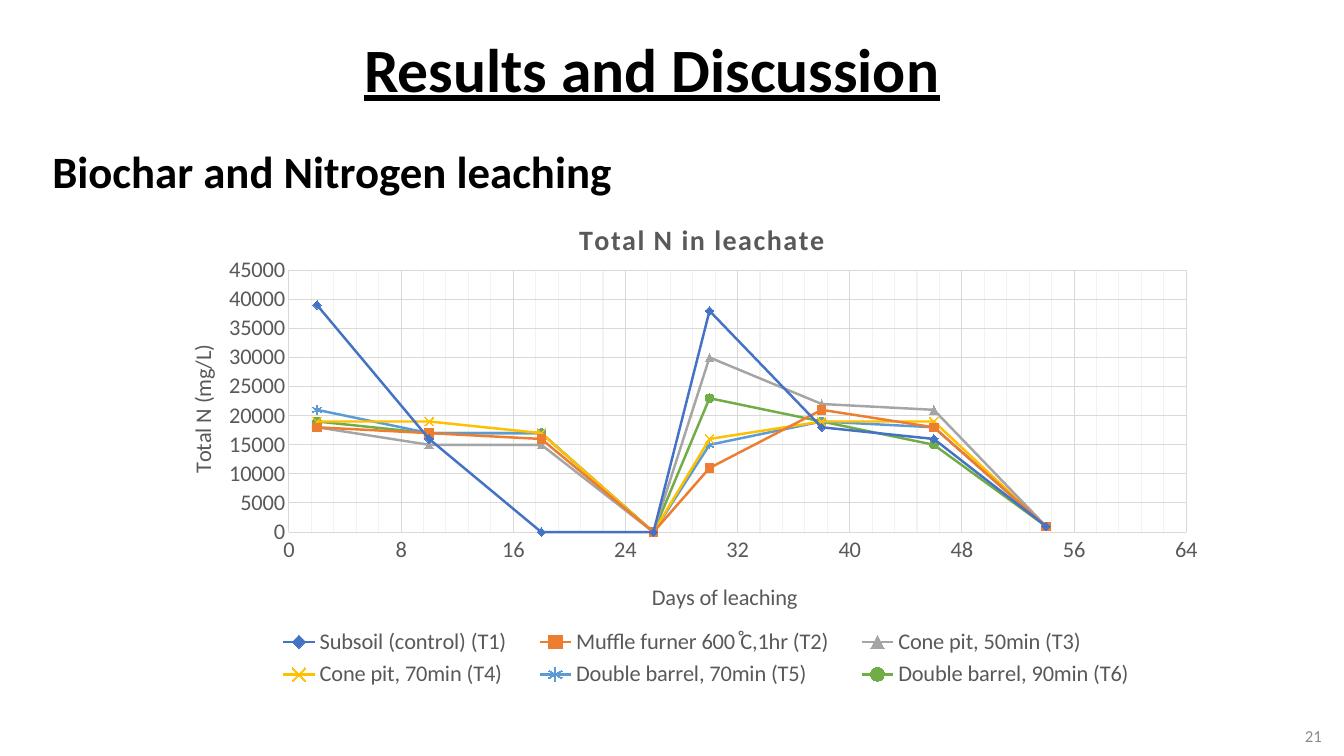
from dataclasses import dataclass

from lxml.etree import SubElement
from pptx import Presentation
from pptx.chart.data import XyChartData
from pptx.dml.color import RGBColor
from pptx.enum.chart import XL_CHART_TYPE as ChartType
from pptx.enum.chart import XL_LEGEND_POSITION as LegendPosition
from pptx.enum.chart import XL_MARKER_STYLE as Marker
from pptx.enum.chart import XL_TICK_MARK as TickMark
from pptx.enum.text import MSO_ANCHOR as Anchor
from pptx.enum.text import PP_ALIGN as Align
from pptx.oxml import parse_xml
from pptx.oxml.ns import nsdecls, qn
from pptx.util import Inches, Pt


@dataclass(frozen=True)
class Theme:
    font: str = "Calibri"
    ink: str = "000000"
    muted: str = "8C8C8C"
    chart_ink: str = "595959"
    grid: str = "D9D9D9"
    minor_grid: str = "F2F2F2"
    title: int = 44
    heading: int = 32
    chart_title: int = 20
    chart_text: int = 16
    page_number: int = 12
    marker: int = 6
    grid_width: float = 0.75
    series_width: float = 1.75


DAYS = (2, 10, 18, 26, 30, 38, 46, 54)
TREATMENTS = [
    ("Subsoil (control) (T1)", "4472C4", Marker.DIAMOND,
     (39000, 16000, 0, 0, 38000, 18000, 16000, 1000)),
    ("Muffle furner 600 ̊C,1hr (T2)", "ED7D31", Marker.SQUARE,
     (18000, 17000, 16000, 0, 11000, 21000, 18000, 1000)),
    ("Cone pit, 50min (T3)", "A5A5A5", Marker.TRIANGLE,
     (18000, 15000, 15000, 0, 30000, 22000, 21000, 1000)),
    ("Cone pit, 70min (T4)", "FFC000", Marker.X,
     (19000, 19000, 17000, 0, 16000, 19000, 19000, 1000)),
    ("Double barrel, 70min (T5)", "5B9BD5", Marker.STAR,
     (21000, 17000, 17000, 0, 15000, 19000, 18000, 1000)),
    ("Double barrel, 90min (T6)", "70AD47", Marker.CIRCLE,
     (19000, 17000, 17000, 0, 23000, 19000, 15000, 1000)),
]
OPEN_MARKERS = (Marker.X, Marker.STAR)


def set_attributes(target, values):
    for name, value in values.items():
        setattr(target, name, value)


def set_layout(element, after, **fractions):
    """Place a chart part by fractions of the chart, behind its child named after."""
    for layout in element.findall(qn("c:layout")):
        element.remove(layout)
    layout = parse_xml(f"<c:layout {nsdecls('c')}/>")
    manual = SubElement(layout, qn("c:manualLayout"))
    if after is None:
        SubElement(manual, qn("c:layoutTarget")).set("val", "inner")
    for name in ("x", "y"):
        SubElement(manual, qn(f"c:{name}Mode")).set("val", "edge")
    for name, value in fractions.items():
        SubElement(manual, qn(f"c:{name}")).set("val", str(value))
    if after is None:
        element.insert(0, layout)
    else:
        element.find(qn(after)).addnext(layout)


class SlideBuilder:
    def __init__(self, slide, theme):
        self.slide = slide
        self.theme = theme

    def style_font(self, font, size, color, **extra):
        values = {"name": self.theme.font, "size": Pt(size), **extra}
        set_attributes(font, values)
        font.color.rgb = RGBColor.from_string(color)

    def style_line(self, line, color, width):
        line.color.rgb = RGBColor.from_string(color)
        line.width = Pt(width)

    def text(self, box, words, size, color, frame=None, paragraph=None, **font):
        shape = self.slide.shapes.add_textbox(*map(Inches, box))
        text_frame = shape.text_frame
        set_attributes(text_frame, {"word_wrap": True, **(frame or {})})
        first = text_frame.paragraphs[0]
        set_attributes(first, paragraph or {})
        run = first.add_run()
        run.text = words
        self.style_font(run.font, size, color, **font)

    def chart_label(self, title, words, size, x, y, spacing=0, bold=False):
        paragraph = title.text_frame.paragraphs[0]
        run = paragraph.add_run()
        run.text = words
        self.style_font(run.font, size, self.theme.chart_ink, bold=bold)
        if spacing:
            run.font._element.set("spc", str(spacing))
        set_layout(title._element, "c:tx", x=x, y=y)

    def minor_gridlines(self, axis):
        axis.has_minor_gridlines = True
        gridlines = axis._element.find(qn("c:minorGridlines"))
        gridlines.append(parse_xml(
            f"<c:spPr {nsdecls('c', 'a')}><a:ln w='{Pt(self.theme.grid_width)}'>"
            f"<a:solidFill><a:srgbClr val='{self.theme.minor_grid}'/></a:solidFill>"
            "</a:ln></c:spPr>"))

    def axis(self, axis, words, place, **scale):
        theme = self.theme
        set_attributes(axis, {
            "minimum_scale": 0,
            "major_tick_mark": TickMark.NONE,
            "minor_tick_mark": TickMark.NONE,
            "has_major_gridlines": True,
            **scale,
        })
        self.style_font(axis.tick_labels.font, theme.chart_text, theme.chart_ink)
        for line in (axis.format.line, axis.major_gridlines.format.line):
            self.style_line(line, theme.grid, theme.grid_width)
        self.chart_label(axis.axis_title, words, theme.chart_text, *place)

    def series(self, series, color, marker):
        theme = self.theme
        self.style_line(series.format.line, color, theme.series_width)
        set_attributes(series.marker, {"style": marker, "size": theme.marker})
        self.style_line(series.marker.format.line, color, theme.grid_width)
        fill = series.marker.format.fill
        if marker in OPEN_MARKERS:
            fill.background()
        else:
            fill.solid()
            fill.fore_color.rgb = RGBColor.from_string(color)

    def leachate_chart(self, box):
        theme = self.theme
        data = XyChartData()
        for name, _, _, amounts in TREATMENTS:
            points = data.add_series(name)
            for day, amount in zip(DAYS, amounts):
                points.add_data_point(day, amount)
        chart = self.slide.shapes.add_chart(
            ChartType.XY_SCATTER_LINES, *map(Inches, box), data).chart
        self.style_font(chart.font, 10, theme.ink)
        set_attributes(chart, {"has_title": True, "has_legend": True})
        self.chart_label(chart.chart_title, "Total N in leachate",
                         theme.chart_title, 0.39, 0.03, spacing=100, bold=True)

        plot = chart.plots[0]
        plot.vary_by_categories = False
        for series, (_, color, marker, _) in zip(plot.series, TREATMENTS):
            self.series(series, color, marker)
        days_axis = chart.category_axis
        self.axis(days_axis, "Days of leaching", (0.46, 0.75),
                  maximum_scale=64, major_unit=8, minor_unit=1.6)
        self.minor_gridlines(days_axis)
        self.axis(chart.value_axis, "Total N (mg/L)", (0.02, 0.28),
                  maximum_scale=45000, major_unit=5000)

        legend = chart.legend
        set_attributes(legend, {"position": LegendPosition.TOP,
                                "include_in_layout": False})
        self.style_font(legend.font, theme.chart_text, theme.chart_ink)
        set_layout(legend._element, "c:legendPos", x=0.09, y=0.84, w=0.85, h=0.14)
        plot_area = chart._chartSpace.find(".//" + qn("c:plotArea"))
        set_layout(plot_area, None, x=0.12, y=0.14, w=0.85, h=0.52)


def main():
    presentation = Presentation()
    set_attributes(presentation, {"slide_width": Inches(13.33),
                                  "slide_height": Inches(7.5)})
    theme = Theme()
    slide = presentation.slides.add_slide(presentation.slide_layouts[6])
    builder = SlideBuilder(slide, theme)
    middle = {"vertical_anchor": Anchor.MIDDLE}
    builder.text((0.72, -0.01, 11.5, 1.45), "Results and Discussion",
                 theme.title, theme.ink, middle,
                 {"alignment": Align.CENTER, "line_spacing": 0.9},
                 bold=True, underline=True)
    builder.text((10.21, 7.1, 3, 0.4), "21", theme.page_number, theme.muted,
                 middle, {"alignment": Align.RIGHT})
    builder.text((0.42, 1.44, 5.85, 0.82), "Biochar and Nitrogen leaching",
                 theme.heading, theme.ink, paragraph={"line_spacing": 0.9},
                 bold=True)
    builder.leachate_chart((1.61, 1.98, 10.47, 5))
    presentation.save("out.pptx")


if __name__ == "__main__":
    main()
